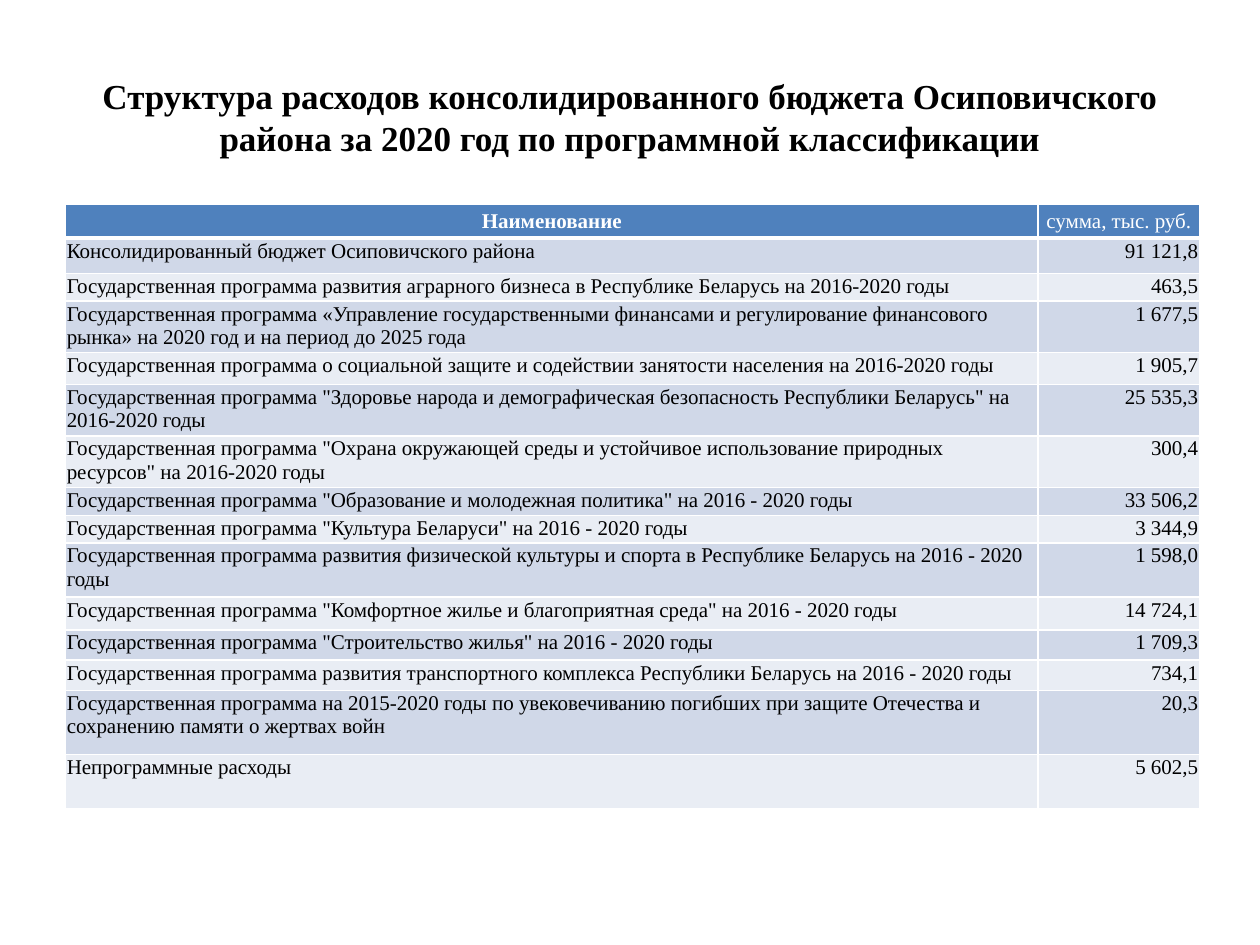
from dataclasses import dataclass

import lxml.etree
import pptx
import pptx.dml.color
import pptx.enum.text
import pptx.oxml.ns
import pptx.util

Inches = pptx.util.Inches
Pt = pptx.util.Pt
Align = pptx.enum.text.PP_ALIGN
Anchor = pptx.enum.text.MSO_ANCHOR

FONT = "Times New Roman"
HUES = {"text": "000000", "white": "FFFFFF", "head": "4F81BD", "odd": "D0D8E8", "even": "E9EDF4"}
TITLE = (
    "Структура расходов консолидированного бюджета Осиповичского района "
    "за 2020 год по программной классификации"
)
STATE = "Государственная программа "


@dataclass
class Item:
    name: str
    sum: str
    tall: float


@dataclass
class Style:
    hue: str
    size: int = 12
    bold: bool = False
    align: Align = Align.LEFT


ITEMS = [
    Item("Консолидированный бюджет Осиповичского района", "91 121,8", 0.28),
    Item(STATE + "развития аграрного бизнеса в Республике Беларусь на 2016-2020 годы", "463,5", 0.22),
    Item(
        STATE + "«Управление государственными финансами и регулирование финансового рынка» "
        "на 2020 год и на период до 2025 года", "1 677,5", 0.38,
    ),
    Item(STATE + "о социальной защите и содействии занятости населения на 2016-2020 годы", "1 905,7", 0.25),
    Item(
        STATE + '"Здоровье народа и демографическая безопасность Республики Беларусь" '
        "на 2016-2020 годы", "25 535,3", 0.39,
    ),
    Item(
        STATE + '"Охрана окружающей среды и устойчивое использование природных ресурсов" '
        "на 2016-2020 годы", "300,4", 0.39,
    ),
    Item(STATE + '"Образование и молодежная политика" на 2016 - 2020 годы', "33 506,2", 0.22),
    Item(STATE + '"Культура Беларуси" на 2016 - 2020 годы', "3 344,9", 0.22),
    Item(
        STATE + "развития физической культуры и спорта в Республике Беларусь на 2016 - 2020 годы",
        "1 598,0", 0.43,
    ),
    Item(STATE + '"Комфортное жилье и благоприятная среда" на 2016 - 2020 годы', "14 724,1", 0.26),
    Item(STATE + '"Строительство жилья" на 2016 - 2020 годы', "1 709,3", 0.24),
    Item(
        STATE + "развития транспортного комплекса Республики Беларусь на 2016 - 2020 годы",
        "734,1", 0.24,
    ),
    Item(
        STATE + "на 2015-2020 годы по увековечиванию погибших при защите Отечества "
        "и сохранению памяти о жертвах войн", "20,3", 0.51,
    ),
    Item("Непрограммные расходы", "5 602,5", 0.43),
]


def tint(hue: str) -> pptx.dml.color.RGBColor:
    return pptx.dml.color.RGBColor.from_string(HUES[hue])


def write(frame, text: str, style: Style) -> None:
    para = frame.paragraphs[0]
    para.alignment = style.align
    run = para.add_run()
    run.text = text
    font = run.font
    font.name, font.size, font.bold = FONT, Pt(style.size), style.bold
    font.color.rgb = tint(style.hue)


def edge(cell, top: int, base: int) -> None:
    name = pptx.oxml.ns.qn
    props = cell._tc.get_or_add_tcPr()
    sides = {"lnL": 1, "lnR": 1, "lnT": top, "lnB": base}
    for spot, (side, width) in enumerate(sides.items()):
        line = lxml.etree.Element(name("a:" + side), w=str(Pt(width)))
        fill = lxml.etree.SubElement(line, name("a:solidFill"))
        lxml.etree.SubElement(fill, name("a:srgbClr"), val=HUES["white"])
        props.insert(spot, line)


def draw_cell(cell, text: str, style: Style, fill: str, row: int) -> None:
    cell.margin_left = cell.margin_right = cell.margin_top = Inches(0.01)
    cell.margin_bottom = 0
    cell.vertical_anchor = Anchor.TOP if row else Anchor.MIDDLE
    cell.fill.solid()
    cell.fill.fore_color.rgb = tint(fill)
    edge(cell, 3 if row == 1 else 1, 1 if row else 3)
    write(cell.text_frame, text, style)


def draw_title(slide) -> None:
    box = slide.shapes.add_textbox(Inches(0.5), Inches(0.3), Inches(9), Inches(1.25))
    frame = box.text_frame
    frame.word_wrap = True
    frame.vertical_anchor = Anchor.MIDDLE
    write(frame, TITLE, Style("text", 20, True, Align.CENTER))


def draw_table(slide) -> None:
    rows = [Item("Наименование", "сумма, тыс. руб.", 0.27)] + ITEMS
    high = sum(item.tall for item in rows)
    table = slide.shapes.add_table(
        len(rows), 2, Inches(0.52), Inches(1.62), Inches(9), Inches(high)
    ).table
    for col, width in zip(table.columns, (7.72, 1.28)):
        col.width = Inches(width)
    heads = (Style("white", bold=True, align=Align.CENTER), Style("white", align=Align.CENTER))
    cells = (Style("text"), Style("text", align=Align.RIGHT))
    for row, item in enumerate(rows):
        table.rows[row].height = Inches(item.tall)
        fill = ("odd" if row % 2 else "even") if row else "head"
        styles = cells if row else heads
        for col, text in enumerate((item.name, item.sum)):
            draw_cell(table.cell(row, col), text, styles[col], fill, row)


def main() -> None:
    deck = pptx.Presentation()
    deck.slide_width, deck.slide_height = Inches(10), Inches(7.5)
    slide = deck.slides.add_slide(deck.slide_layouts[6])
    draw_title(slide)
    draw_table(slide)
    deck.save("out.pptx")


if __name__ == "__main__":
    main()
